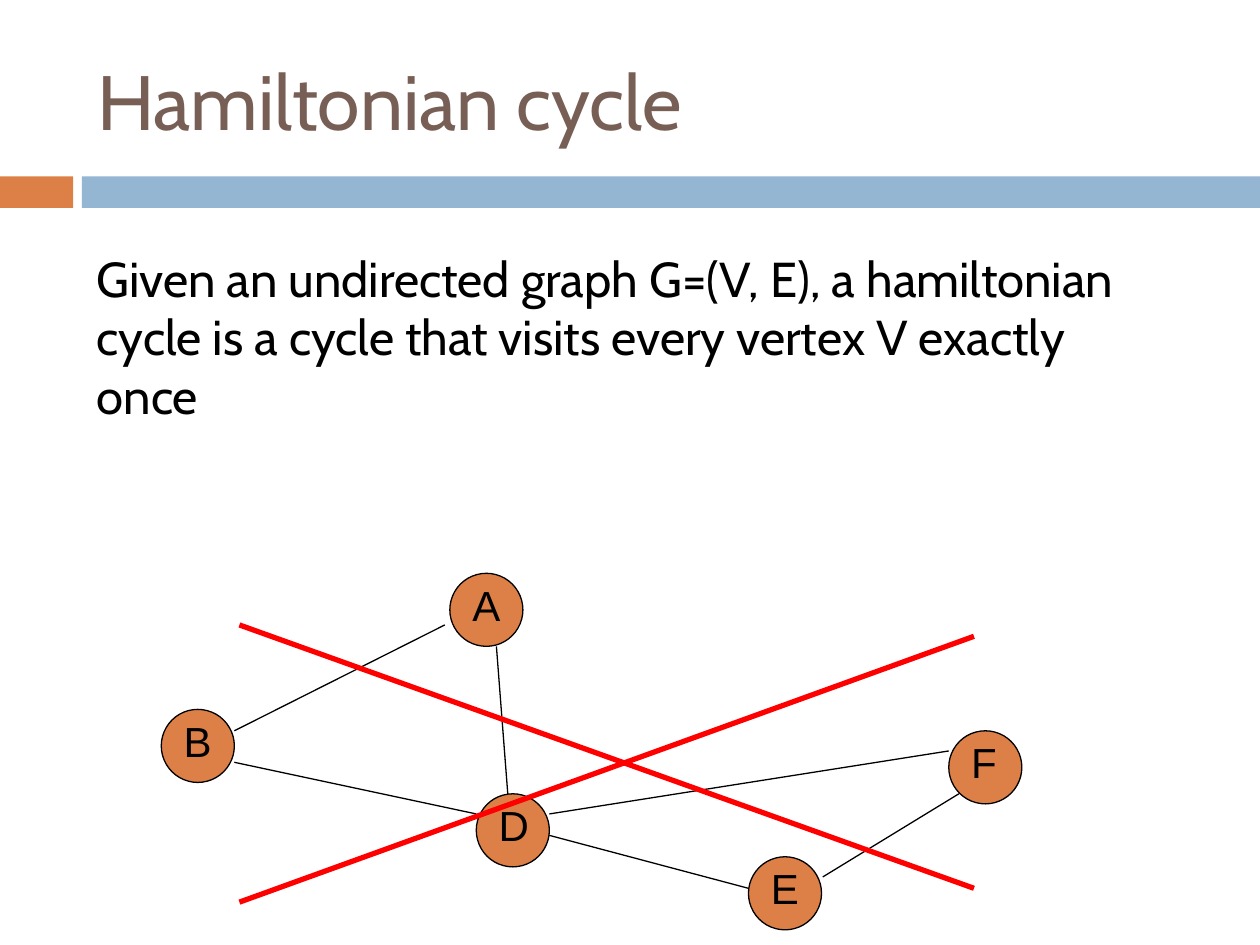
from lxml.etree import SubElement
from pptx import Presentation
from pptx.dml.color import RGBColor
from pptx.enum.shapes import MSO_CONNECTOR, MSO_SHAPE
from pptx.enum.text import MSO_ANCHOR, PP_ALIGN
from pptx.oxml.ns import qn
from pptx.util import Inches, Pt

ORANGE = RGBColor(0xDD, 0x80, 0x47)
BLUE = RGBColor(0x94, 0xB6, 0xD2)
BROWN = RGBColor(0x77, 0x5F, 0x55)
BLACK = RGBColor(0, 0, 0)
RED = RGBColor(0xFF, 0, 0)

COLUMNS, ROWS = 100, 75
NODE_SIZE = 5.8
LABEL_OFFSET, LABEL_SIZE = 0.8, 5

NODES = {
    "A": (35.7, 45.5),
    "B": (12.8, 56.3),
    "E": (59.4, 68),
    "D": (37.8, 63),
    "F": (75.3, 58),
}
EDGES = [
    ((18.6, 58), (35.3, 49.6)),
    ((18.6, 60.5), (37.8, 64.6)),
    ((40.3, 63), (39.4, 51.3)),
    ((43.6, 66.3), (59.4, 70.5)),
    ((65.3, 69.6), (76.1, 63)),
    ((43.6, 64.6), (75.3, 59.6)),
]
CROSS = [((19, 49.6), (77.3, 70.5)), ((19, 71.6), (77.3, 50.5))]


class SlideBuilder:
    heading_font = "Cabin"
    label_font = "Arial"

    def __init__(self, presentation):
        self.column = presentation.slide_width / COLUMNS
        self.row = presentation.slide_height / ROWS
        self.slide = presentation.slides.add_slide(presentation.slide_layouts[5])

    def box(self, left, top, width, height):
        return (round(left * self.column), round(top * self.row),
                round(width * self.column), round(height * self.row))

    def set_text(self, shape, text, font_name, size, color, anchor=MSO_ANCHOR.TOP):
        frame = shape.text_frame
        frame.word_wrap = True
        frame.vertical_anchor = anchor
        paragraph = frame.paragraphs[0]
        paragraph.text = text
        paragraph.alignment = PP_ALIGN.LEFT
        paragraph.font.name = font_name
        paragraph.font.size = Pt(size)
        paragraph.font.color.rgb = color

    def title(self, text, *bounds):
        shape = self.slide.shapes.title
        shape.left, shape.top, shape.width, shape.height = self.box(*bounds)
        self.set_text(shape, text, self.heading_font, 44, BROWN, MSO_ANCHOR.MIDDLE)

    def text(self, text, *bounds):
        shape = self.slide.shapes.add_textbox(*self.box(*bounds))
        self.set_text(shape, text, self.heading_font, 28, BLACK)

    def bar(self, color, *bounds):
        shape = self.slide.shapes.add_shape(MSO_SHAPE.RECTANGLE, *self.box(*bounds))
        shape.shadow.inherit = False
        shape.fill.solid()
        shape.fill.fore_color.rgb = color
        shape.line.fill.background()

    def node(self, name, left, top):
        group = self.slide.shapes.add_group_shape()
        circle = group.shapes.add_shape(
            MSO_SHAPE.OVAL, *self.box(left, top, NODE_SIZE, NODE_SIZE))
        circle.shadow.inherit = False
        circle.fill.solid()
        circle.fill.fore_color.rgb = ORANGE
        circle.line.color.rgb = BLACK
        circle.line.width = Pt(0.75)
        label = group.shapes.add_textbox(
            *self.box(left + LABEL_OFFSET, top, LABEL_SIZE, LABEL_SIZE))
        self.set_text(label, name, self.label_font, 24, BLACK)

    def line(self, start, end, color, width):
        points = self.box(*start, *end)
        connector = self.slide.shapes.add_connector(MSO_CONNECTOR.STRAIGHT, *points)
        connector.line.color.rgb = color
        connector.line.width = Pt(width)
        SubElement(connector._element.spPr, qn("a:effectLst"))


def main():
    presentation = Presentation()
    presentation.slide_width = Inches(10)
    presentation.slide_height = Inches(7.5)
    builder = SlideBuilder(presentation)
    builder.bar(ORANGE, 0, 14, 5.8, 2.5)
    builder.bar(BLUE, 6.5, 14, 93.5, 2.5)
    builder.title("Hamiltonian cycle", 6.7, 2.5, 89.2, 10.8)
    builder.text("Given an undirected graph G=(V, E), a hamiltonian cycle is a cycle "
                 "that visits every vertex V exactly once", 6.7, 19.2, 84.6, 10.4)
    for name, position in NODES.items():
        builder.node(name, *position)
    for start, end in EDGES:
        builder.line(start, end, BLACK, 0.75)
    for start, end in CROSS:
        builder.line(start, end, RED, 3)
    presentation.save("out.pptx")


if __name__ == "__main__":
    main()
